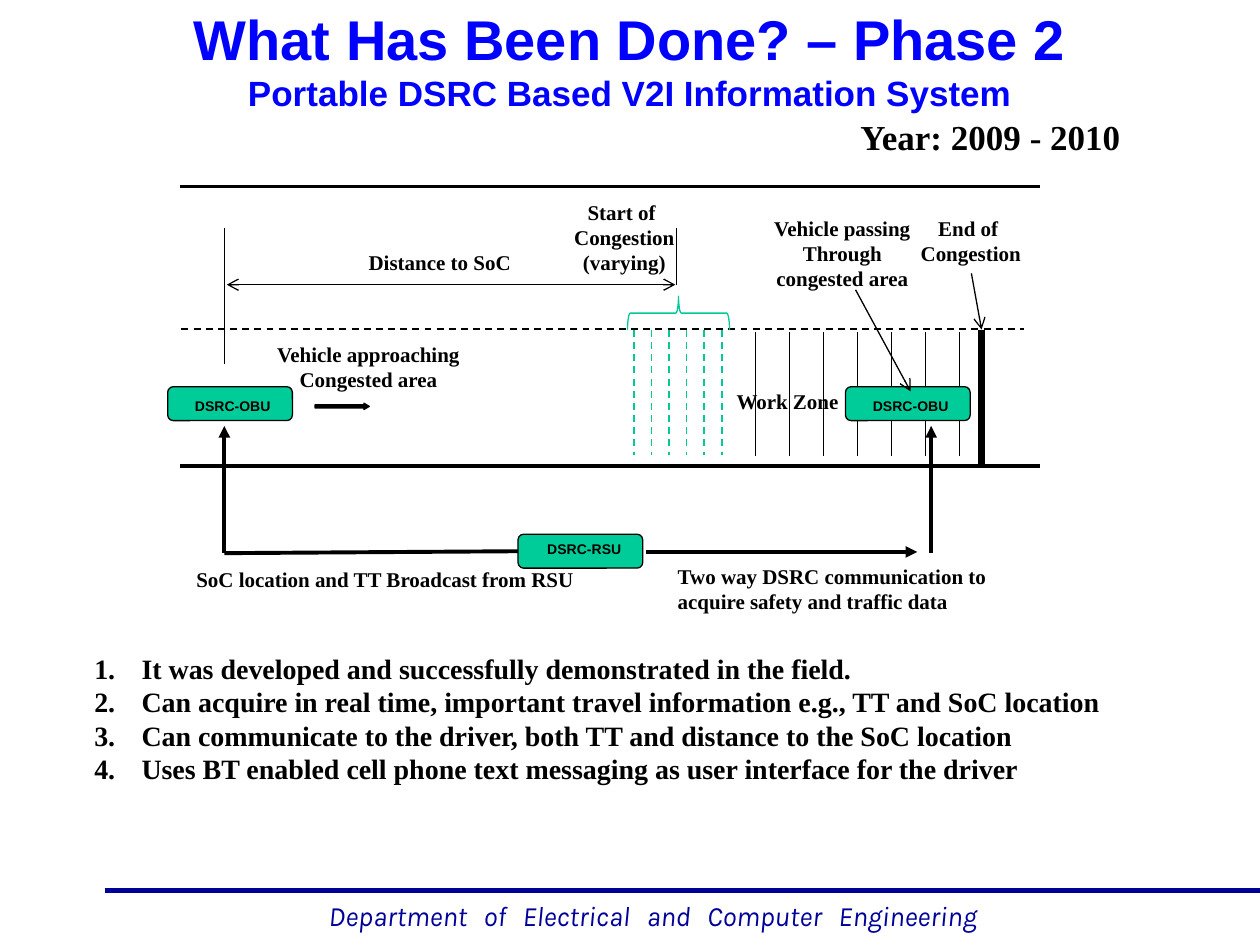
from lxml import etree
from pptx import Presentation
from pptx.dml.color import RGBColor
from pptx.enum.dml import MSO_LINE as Dash
from pptx.enum.shapes import MSO_CONNECTOR, MSO_SHAPE as Shape
from pptx.enum.text import MSO_ANCHOR as Anchor, MSO_AUTO_SIZE as AutoSize, PP_ALIGN as Align
from pptx.oxml.ns import qn
from pptx.util import Pt

BLACK, BLUE, NAVY = "000000", "0000FF", "000099"
GREEN, DARK_GREEN = "00CC99", "00C896"
SERIF, SANS = "Times New Roman", "Arial"
color = RGBColor.from_string

prs = Presentation()
prs.slide_width, prs.slide_height = Pt(720), Pt(540)
slide = prs.slides.add_slide(prs.slide_layouts[6])
shapes = slide.shapes


def add_line(x1, y1, x2, y2, width, ink=BLACK, dash=None, head=None, tail=None):
    line = shapes.add_connector(MSO_CONNECTOR.STRAIGHT, Pt(x1), Pt(y1), Pt(x2), Pt(y2))
    line.line.width = Pt(width)
    line.line.color.rgb = color(ink)
    if dash:
        line.line.dash_style = dash
    for tag, kind in (("a:headEnd", head), ("a:tailEnd", tail)):
        if kind:
            etree.SubElement(line.line._get_or_add_ln(), qn(tag), type=kind)
    etree.SubElement(line._element.spPr, qn("a:effectLst"))
    return line


def add_label(x, y, w, h, text, size=12, font=SERIF, ink=BLACK, align=Align.CENTER, wrap=True):
    frame = shapes.add_textbox(Pt(x), Pt(y), Pt(w), Pt(h)).text_frame
    frame.word_wrap = wrap
    frame.auto_size = AutoSize.SHAPE_TO_FIT_TEXT
    frame.text = text
    for paragraph in frame.paragraphs:
        paragraph.alignment = align
        for run in paragraph.runs:
            run.font.size, run.font.name, run.font.bold = Pt(size), font, True
            run.font.color.rgb = color(ink)
    return frame


# Footer: rule and department name, with widened word gaps
add_line(59.8, 509, 720, 509, 3, NAVY)
footer = shapes.add_textbox(Pt(180.7), Pt(509.8), Pt(411.8), Pt(26.6)).text_frame
footer.word_wrap = False
department = footer.paragraphs[0]
for position, word in enumerate("Department of Electrical and Computer Engineering".split()):
    for piece in ([" "] if position else []) + [word]:
        run = department.add_run()
        run.text = piece
        run.font.size, run.font.name, run.font.italic = Pt(16), "Karla", True
        run.font.color.rgb = color(NAVY)
        if piece == " ":
            run.font._element.set("spc", "600")

# Title and year
title = add_label(36, 8.6, 648, 50.4,
                  "What Has Been Done? – Phase 2\nPortable DSRC Based V2I Information System",
                  32, SANS, BLUE)
title.auto_size = AutoSize.NONE
title.vertical_anchor = Anchor.MIDDLE
title.paragraphs[1].runs[0].font.size = Pt(20)
add_label(484.6, 62.6, 199.4, 31.7, "Year: 2009 - 2010", 20, align=Align.LEFT)

# Numbered results
results = add_label(46.8, 368.6, 619.2, 104.4, "\n".join([
    "It was developed and successfully demonstrated in the field.",
    "Can acquire in real time, important travel information e.g., TT and SoC location",
    "Can communicate to the driver, both TT and distance to the SoC location",
    "Uses BT enabled cell phone text messaging as user interface for the driver",
]), 16, align=Align.LEFT)
for result in results.paragraphs:
    properties = result._p.get_or_add_pPr()
    properties.set("marL", str(Pt(27)))
    properties.set("indent", str(-Pt(27)))
    etree.SubElement(properties, qn("a:buFont"), typeface="+mj-lt")
    etree.SubElement(properties, qn("a:buAutoNum"), type="arabicPeriod")

# Road edges and lane divider
for edge_y in (106.6, 266.2):
    add_line(103, edge_y, 594, edge_y, 2.25)
add_line(103.7, 187.8, 585.4, 187.8, 1, dash=Dash.DASH)

# Work zone hatching, moving start of congestion, end of congestion
for step in range(7):
    x = 431.8 + 19.37 * step
    add_line(x, 190, x, 260, 0.25, dash=Dash.ROUND_DOT)
for step in range(6):
    x = 362.2 + 10.05 * step
    add_line(x, 188.6, x, 260, 1, DARK_GREEN, Dash.DASH)
add_line(560.9, 188.6, 560.9, 266.4, 4)

brace = shapes.add_shape(Shape.LEFT_BRACE, Pt(378), Pt(149.8), Pt(19.4), Pt(58.3))
brace.rotation = 90
brace.fill.background()
brace.line.color.rgb = color(DARK_GREEN)
approach = shapes.add_shape(Shape.LEFT_ARROW, Pt(180), Pt(230.4), Pt(31), Pt(3.6))
approach.rotation = 180
approach.adjustments[1] = 0.857
approach.fill.solid()
approach.fill.fore_color.rgb = color(BLACK)
approach.line.color.rgb = color(BLACK)
for outline in (brace, approach):
    outline.line.width = Pt(0.75)
    outline.shadow.inherit = False

# Radio units
units = []
for name, x, y, text_x, text_y in [
    ("DSRC-OBU", 95.8, 221, 101.5, 223.9),
    ("DSRC-OBU", 483.1, 221, 488.9, 223.9),
    ("DSRC-RSU", 296, 305.3, 302.4, 305.3),
]:
    unit = shapes.add_shape(Shape.ROUNDED_RECTANGLE, Pt(x), Pt(y), Pt(71.3), Pt(19.4))
    unit.shadow.inherit = False
    unit.fill.solid()
    unit.fill.fore_color.rgb = color(GREEN)
    unit.line.color.rgb = color(BLACK)
    unit.line.width = Pt(0.75)
    add_label(text_x, text_y, 63, 18.7, name, 8, SANS, wrap=False)
    units.append(unit)
roadside = units[2]

# Radio links
for x in (128.2, 532.1):
    add_line(x, 243.4, x, 316.1, 2.25, head="triangle")
add_line(369.4, 315.4, 524.2, 315.4, 2.25, tail="triangle")
broadcast = add_line(128.2, 316.1, 296, 315, 2.25)
broadcast.end_connect(roadside, 1)

# Distance measure and pointers
add_line(128.2, 130.3, 128.2, 208.1, 0.75)
add_line(386.6, 130.3, 386.6, 162.7, 0.75)
add_line(129.6, 162.7, 385.9, 162.7, 0.75, head="arrow", tail="arrow")
add_line(520.3, 223.6, 488.9, 165.6, 0.75, head="arrow")
add_line(560.9, 188.3, 555.1, 156.2, 0.75, head="arrow")

# Diagram labels
for x, y, w, h, text, align, wrap in [
    (416.9, 119.5, 128.9, 66.2, "Vehicle passing\nThrough\ncongested area", Align.CENTER, True),
    (148.3, 191.5, 124.6, 36.7, "Vehicle approaching\nCongested area", Align.CENTER, False),
    (411.1, 218.2, 77.8, 22.3, "Work Zone", Align.CENTER, True),
    (303.1, 110.2, 107.3, 51.8, "Start of \nCongestion\n(varying)", Align.CENTER, True),
    (501.1, 119.5, 107.3, 36.7, "End of \nCongestion", Align.CENTER, True),
    (196.6, 139, 109.4, 22.3, "Distance to SoC", Align.CENTER, True),
    (105.1, 320.4, 233.3, 22.3, "SoC location and TT Broadcast from RSU", Align.LEFT, False),
    (380.2, 318.2, 196.6, 36.7,
     "Two way DSRC communication to\nacquire safety and traffic data", Align.LEFT, False),
]:
    add_label(x, y, w, h, text, align=align, wrap=wrap)

prs.save("out.pptx")
